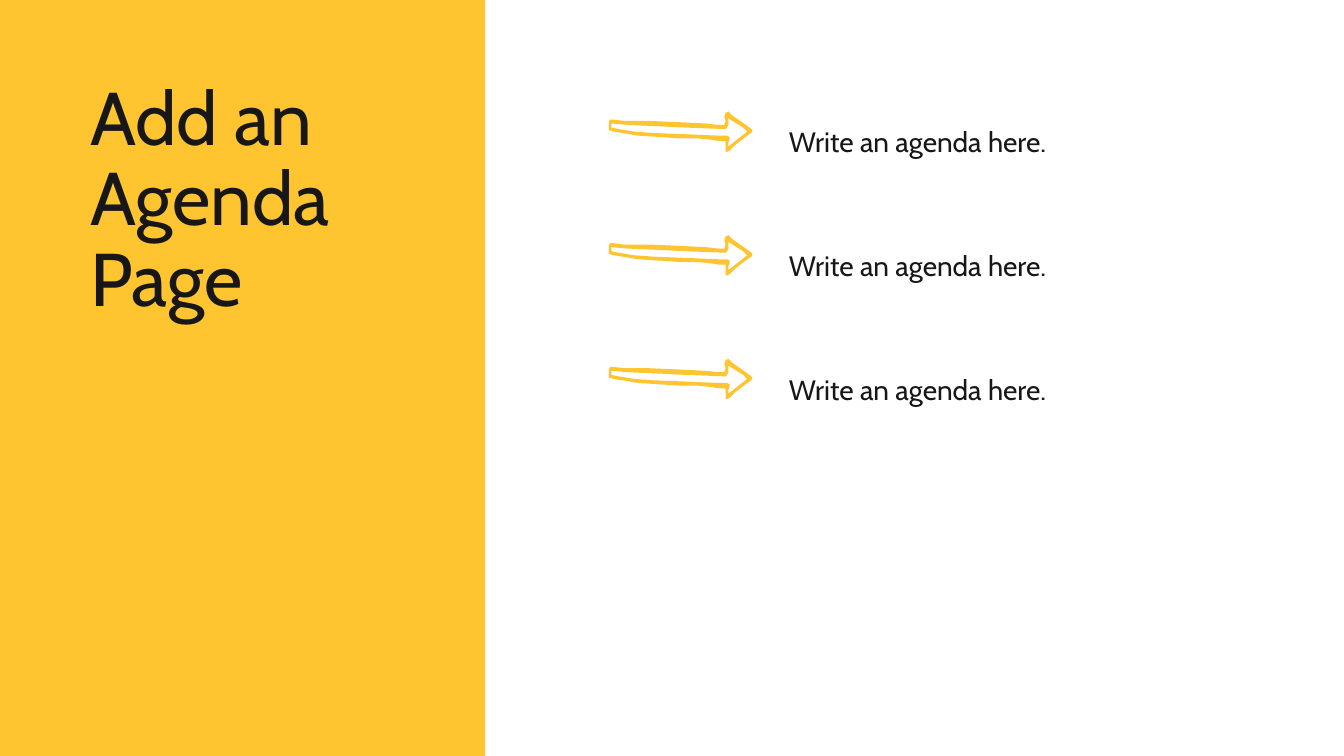
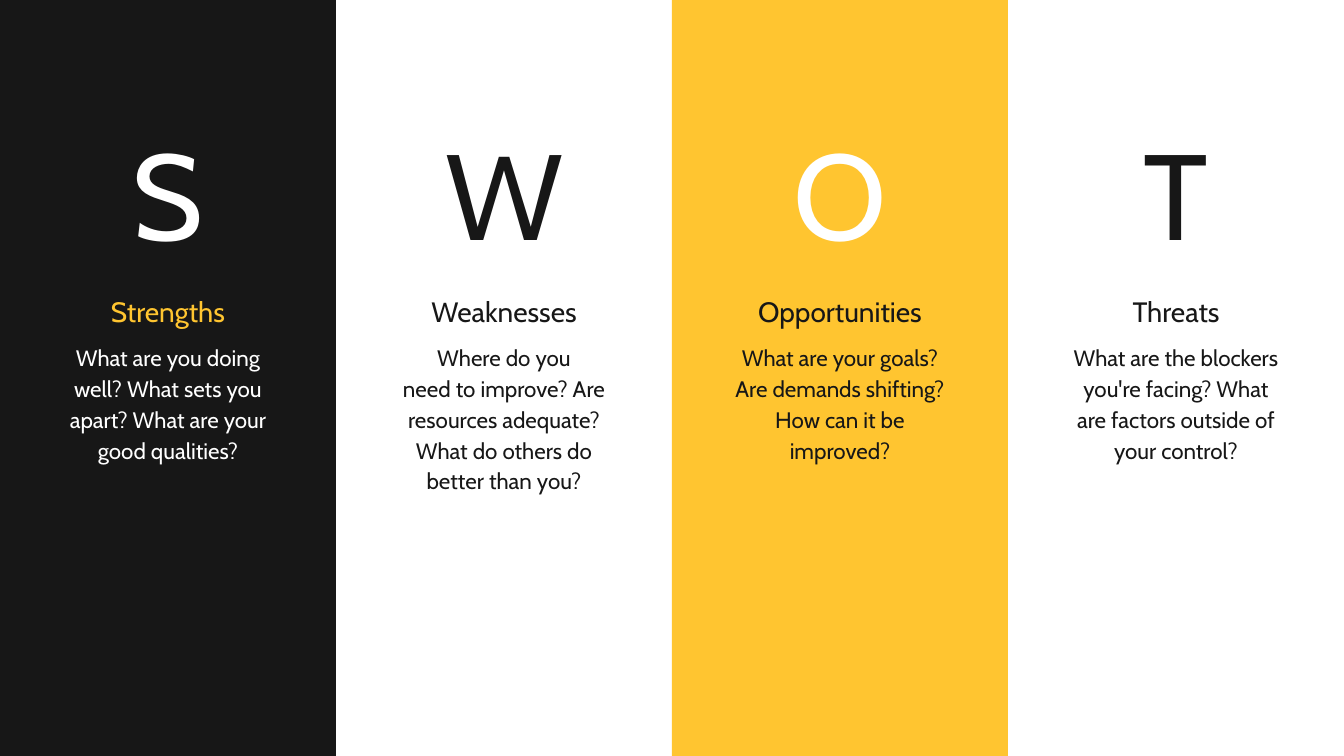
from pptx import Presentation
from pptx.dml.color import RGBColor
from pptx.enum.shapes import MSO_SHAPE
from pptx.enum.text import MSO_ANCHOR, MSO_AUTO_SIZE, PP_ALIGN
from pptx.util import Inches, Pt

RECT = MSO_SHAPE.RECTANGLE
TOP = MSO_ANCHOR.TOP
GROW = MSO_AUTO_SIZE.SHAPE_TO_FIT_TEXT
LEFT, CENTER = PP_ALIGN.LEFT, PP_ALIGN.CENTER

WIDE = 10
HIGH = WIDE * 9 / 16
FONT = "Cabin"
GOLD, INK, WHITE = "FFC530", "171717", "FFFFFF"

TITLE = "Add an Agenda Page"
AGENDA = ["Write an agenda here."] * 3
SWOT = [
    ("S", "Strengths",
     "What are you doing well? What sets you apart? What are your good qualities?",
     0.9, INK, WHITE, GOLD, WHITE),
    ("W", "Weaknesses",
     "Where do you\nneed to improve? Are resources adequate?\nWhat do others do better than you?",
     1.13, None, INK, INK, INK),
    ("O", "Opportunities",
     "What are your goals? Are demands shifting? How can it be improved?",
     0.9, GOLD, WHITE, INK, INK),
    ("T", "Threats",
     "What are the blockers you're facing? What are factors outside of your control?",
     1.13, None, INK, INK, INK),
]

OUTER = [
    (86, 10), (87, 7), (86, 4), (87, 1), (89, 0), (92, 3), (102, 10),
    (106, 13), (107, 14.5), (106, 16), (103, 18), (94, 25), (90, 29),
    (88, 30), (87, 30), (87, 22), (82, 22), (76, 21), (66, 20), (53, 20),
    (38, 19), (22, 18), (4, 15), (0, 14), (0, 8), (1, 6.5), (3, 6),
    (11, 7), (29, 7), (53, 8), (73, 9), (81, 10),
]
INNER = [
    (2, 12), (7, 13), (19, 15), (33, 16), (58, 17), (82, 18), (88, 18),
    (90, 19), (90, 21), (89, 23), (89, 26), (103, 15), (102, 13.5),
    (100, 12), (92, 7), (89, 5), (89, 10), (88.5, 12), (87, 13), (84, 13),
    (57, 12), (37, 11), (14, 10), (3, 9), (2, 9),
]


def color(code):
    return RGBColor.from_string(code)


def paint(shape, code):
    shape.shadow.inherit = False
    shape.fill.solid()
    shape.fill.fore_color.rgb = color(code)
    shape.line.fill.background()


def band(slide, left, width, code):
    box = slide.shapes.add_shape(RECT, Inches(left), 0, Inches(width), Inches(HIGH))
    paint(box, code)


def write(slide, text, at, size, code=INK, gap=1.0, align=LEFT, box=None):
    left, top, width, height = map(Inches, at)
    if box is None:
        box = slide.shapes.add_textbox(left, top, width, height)
    else:
        box.left, box.top, box.width, box.height = left, top, width, height
    frame = box.text_frame
    frame.text = text
    frame.word_wrap = True
    frame.auto_size = GROW
    frame.vertical_anchor = TOP
    frame.margin_left = frame.margin_right = 0
    frame.margin_top = frame.margin_bottom = 0
    for para in frame.paragraphs:
        para.alignment = align
        para.line_spacing = gap
        for run in para.runs:
            run.font.name = FONT
            run.font.size = Pt(size)
            run.font.color.rgb = color(code)


def arrow(slide, left, top):
    pen = slide.shapes.build_freeform(*OUTER[0], scale=Inches(0.01))
    pen.add_line_segments(OUTER[1:])
    pen.move_to(*INNER[0])
    pen.add_line_segments(INNER[1:])
    paint(pen.convert_to_shape(Inches(left), Inches(top)), GOLD)


def agenda(deck):
    slide = deck.slides.add_slide(deck.slide_layouts[5])
    for row, item in enumerate(AGENDA):
        top = 0.83 + row * 0.92
        arrow(slide, 4.53, top)
        write(slide, item, (5.87, top, 3.25, 0.25), 15, gap=1.4)
    band(slide, 0, 3.61, GOLD)
    title = slide.shapes.title
    slide.shapes._spTree.append(title._element)
    write(slide, TITLE, (0.67, 0.6, 2.27, 1.82), 40, gap=0.9, box=title)


def swot(deck):
    slide = deck.slides.add_slide(deck.slide_layouts[6])
    step = WIDE / len(SWOT)
    width = 1.62
    for col, (mark, name, body, tall, back, *inks) in enumerate(SWOT):
        if back:
            band(slide, col * step, step, back)
        left = col * step + (step - width) / 2
        parts = [
            (mark, 0.78, 1.09, 65, 1.1),
            (name, 2.12, 0.25, 15, 1.3),
            (body, 2.53, tall, 12, 1.15),
        ]
        for (text, top, height, size, gap), ink in zip(parts, inks):
            write(slide, text, (left, top, width, height), size, ink, gap, CENTER)


def main():
    deck = Presentation()
    deck.slide_width, deck.slide_height = Inches(WIDE), Inches(HIGH)
    agenda(deck)
    swot(deck)
    deck.save("out.pptx")


if __name__ == "__main__":
    main()
